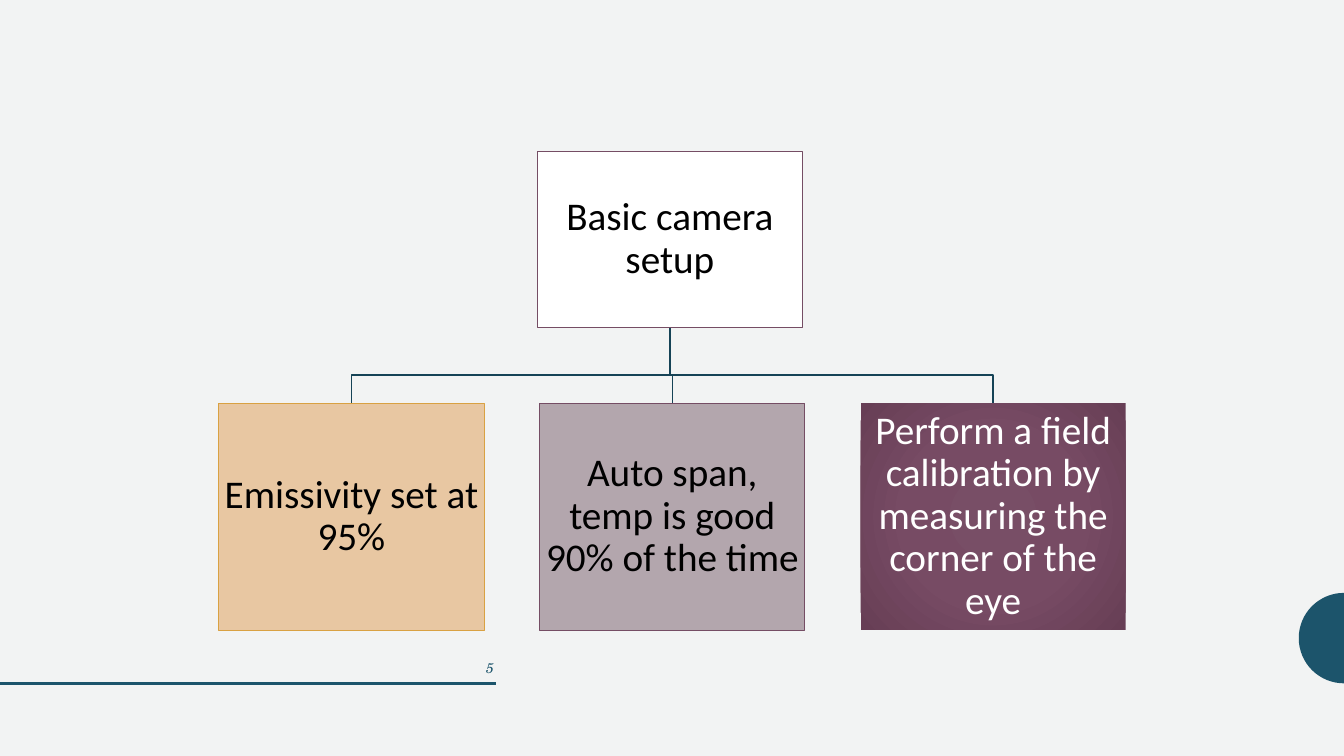
from math import cos, pi, sin

from lxml import etree
from pptx import Presentation
from pptx.dml.color import RGBColor
from pptx.enum.shapes import MSO_CONNECTOR, MSO_SHAPE
from pptx.enum.text import MSO_ANCHOR, PP_ALIGN
from pptx.oxml.ns import qn
from pptx.util import Pt

RECT = MSO_SHAPE.RECTANGLE
STRAIGHT = MSO_CONNECTOR.STRAIGHT
MIDDLE = MSO_ANCHOR.MIDDLE
CENTER, RIGHT = PP_ALIGN.CENTER, PP_ALIGN.RIGHT

COLORS = {
    "background": "F2F3F3", "teal": "1C546B", "branch": "164356",
    "white": "FFFFFF", "black": "000000", "plum": "754D64",
    "sand": "E8C7A2", "gold": "D9A142", "mauve": "B3A6AD",
    "plum_light": "784E66", "plum_mid": "774B64", "plum_dark": "673E55",
}

# Organisation chart geometry, in points
BOX_W = 189.4
ROOT_LEFT, ROOT_TOP, ROOT_H = 383.8, 108, 126
ROW_LEFT, ROW_TOP, ROW_H, ROW_STEP = 156.3, 288, 162, 229.2
BEND_Y = 267.8


def rgb(name):
    return RGBColor.from_string(COLORS[name])


def write(sp, text, size, font, color, align, italic=None):
    tf = sp.text_frame
    tf.word_wrap = True
    tf.text = text
    p = tf.paragraphs[0]
    p.alignment = align
    r = p.runs[0]
    r.font.size, r.font.name, r.font.italic = Pt(size), font, italic
    r.font.color.rgb = rgb(color)
    return tf


def add_outline(s, points, close):
    pts = [(Pt(x), Pt(y)) for x, y in points]
    builder = s.shapes.build_freeform(*pts[0])
    builder.add_line_segments(pts[1:], close=close)
    sp = builder.convert_to_shape()
    sp.shadow.inherit = False
    return sp


def add_half_disc(s, cx, cy, radius, steps=32):
    angles = [pi / 2 + pi * i / steps for i in range(steps + 1)]
    points = [(cx + radius * cos(a), cy + radius * sin(a)) for a in angles]
    sp = add_outline(s, points, True)
    sp.fill.solid()
    sp.fill.fore_color.rgb = rgb("teal")
    sp.line.fill.background()


def add_rule(s, x1, y1, x2, y2):
    line = s.shapes.add_connector(STRAIGHT, Pt(x1), Pt(y1), Pt(x2), Pt(y2))
    line.line.color.rgb = rgb("teal")
    line.line.width = Pt(2)
    etree.SubElement(line._element.spPr, qn("a:effectLst"))


def add_branch(s, x1, x2):
    sp = add_outline(s, [(x1, ROOT_TOP + ROOT_H), (x1, BEND_Y),
                         (x2, BEND_Y), (x2, ROW_TOP)], False)
    sp.fill.background()
    sp.line.color.rgb = rgb("branch")
    sp.line.width = Pt(1)


def fill_radial(sp, stops):
    sp.fill.gradient()
    grad = sp._element.spPr.find(qn("a:gradFill"))
    for child in list(grad):
        grad.remove(child)
    stop_list = etree.SubElement(grad, qn("a:gsLst"))
    for percent, color in stops:
        stop = etree.SubElement(stop_list, qn("a:gs"), pos=str(percent * 1000))
        etree.SubElement(stop, qn("a:srgbClr"), val=COLORS[color])
    radial = etree.SubElement(grad, qn("a:path"), path="circle")
    etree.SubElement(radial, qn("a:fillToRect"),
                     l="50000", t="50000", r="50000", b="50000")


def add_box(s, left, top, height, text, fill, line, width, color="black"):
    sp = s.shapes.add_shape(RECT, Pt(left), Pt(top), Pt(BOX_W), Pt(height))
    sp.shadow.inherit = False
    if isinstance(fill, list):
        fill_radial(sp, fill)
    else:
        sp.fill.solid()
        sp.fill.fore_color.rgb = rgb(fill)
    if line:
        sp.line.color.rgb = rgb(line)
        sp.line.width = Pt(width)
    else:
        sp.line.fill.background()
    tf = write(sp, text, 28, "Calibri", color, CENTER)
    tf.vertical_anchor = MIDDLE
    tf.margin_left = tf.margin_right = Pt(1.4)
    tf.margin_top = tf.margin_bottom = Pt(1.4)
    tf.paragraphs[0].line_spacing = 0.9


def add_page_number(s, number):
    sp = s.shapes.add_textbox(Pt(59.8), Pt(467.3), Pt(300), Pt(28.8))
    write(sp, number, 10, "TeX Gyre Schola", "teal", RIGHT, italic=True)


def main():
    prs = Presentation()
    prs.slide_width, prs.slide_height = Pt(960), Pt(540)
    s = prs.slides.add_slide(prs.slide_layouts[6])
    s.background.fill.solid()
    s.background.fill.fore_color.rgb = rgb("background")

    # Decoration
    add_half_disc(s, 960, 455.8, 32.3)
    add_rule(s, 0, 488.2, 354.2, 488.2)

    # Branches, then the root and its three steps
    steps = [
        ("Emissivity set at 95%", "sand", "gold", 0.5, "black"),
        ("Auto span, temp is good 90% of the time",
         "mauve", "plum", 0.5, "black"),
        ("Perform a field calibration by measuring the corner of the eye",
         [(0, "plum_light"), (50, "plum_mid"), (100, "plum_dark")],
         None, 0, "white"),
    ]
    lefts = [ROW_LEFT + i * ROW_STEP for i in range(len(steps))]
    for left in lefts:
        add_branch(s, ROOT_LEFT + BOX_W / 2, left + BOX_W / 2)
    add_box(s, ROOT_LEFT, ROOT_TOP, ROOT_H, "Basic camera setup",
            "white", "plum", 1)
    for left, step in zip(lefts, steps):
        add_box(s, left, ROW_TOP, ROW_H, *step)

    add_page_number(s, "5")
    prs.save("out.pptx")


if __name__ == "__main__":
    main()
